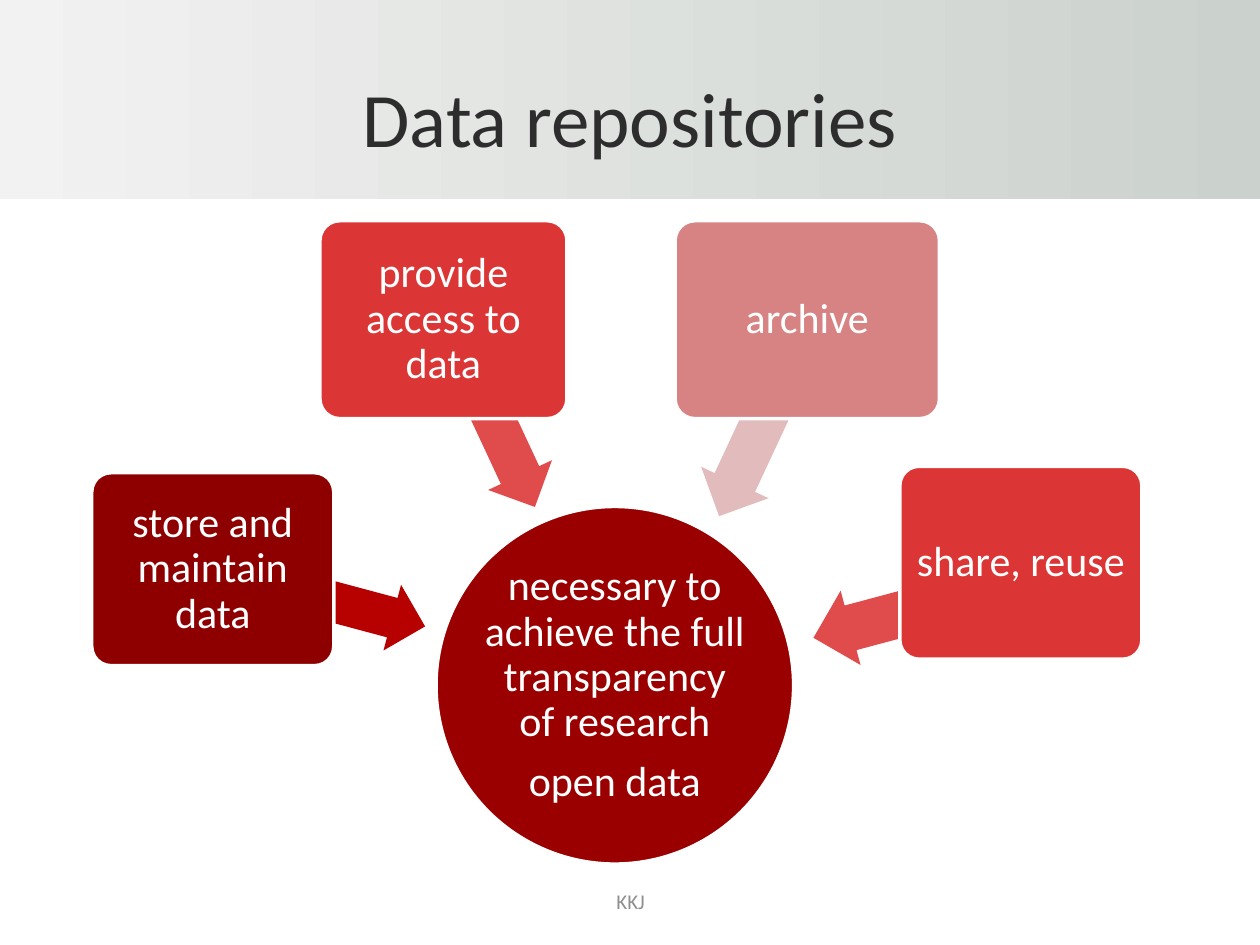
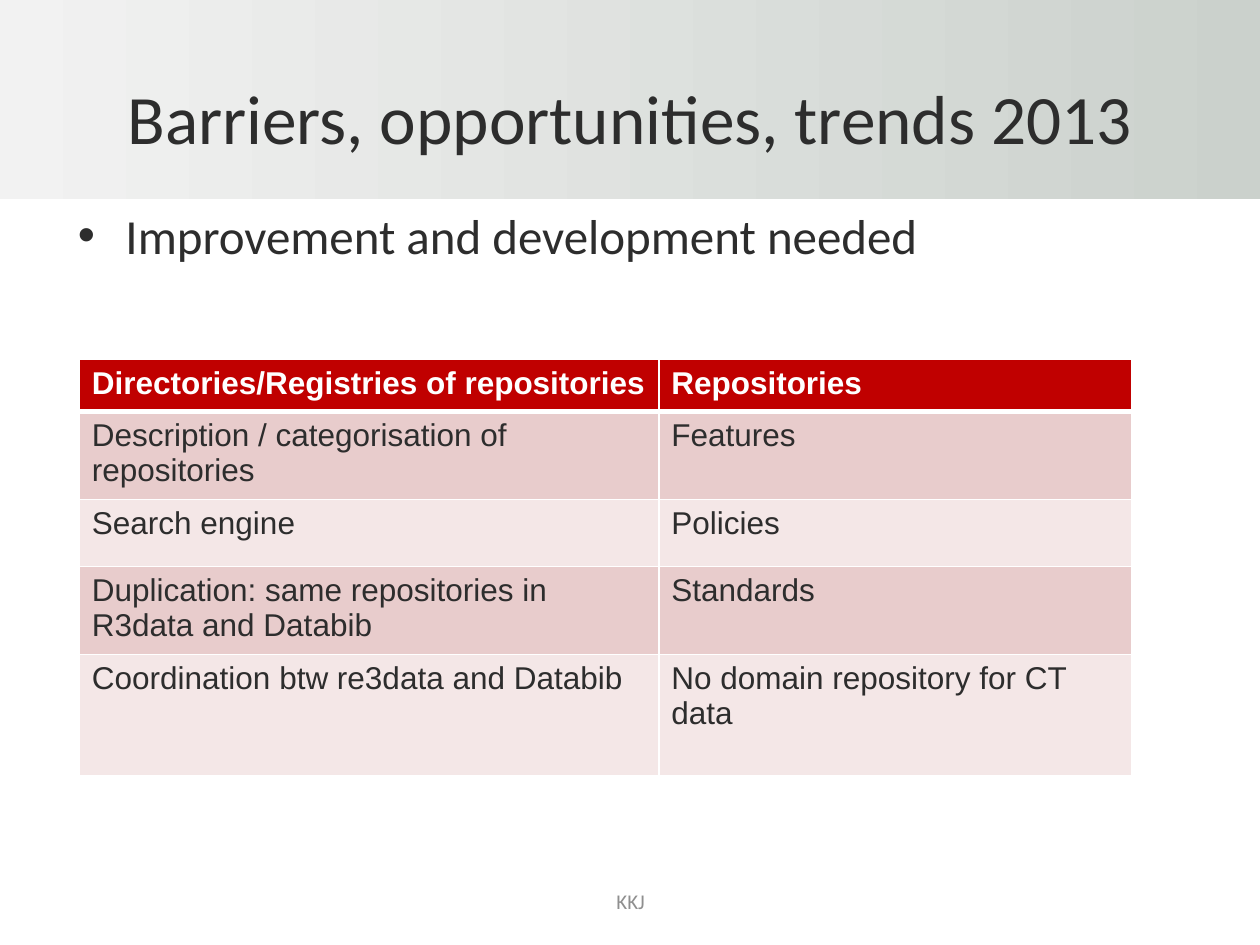
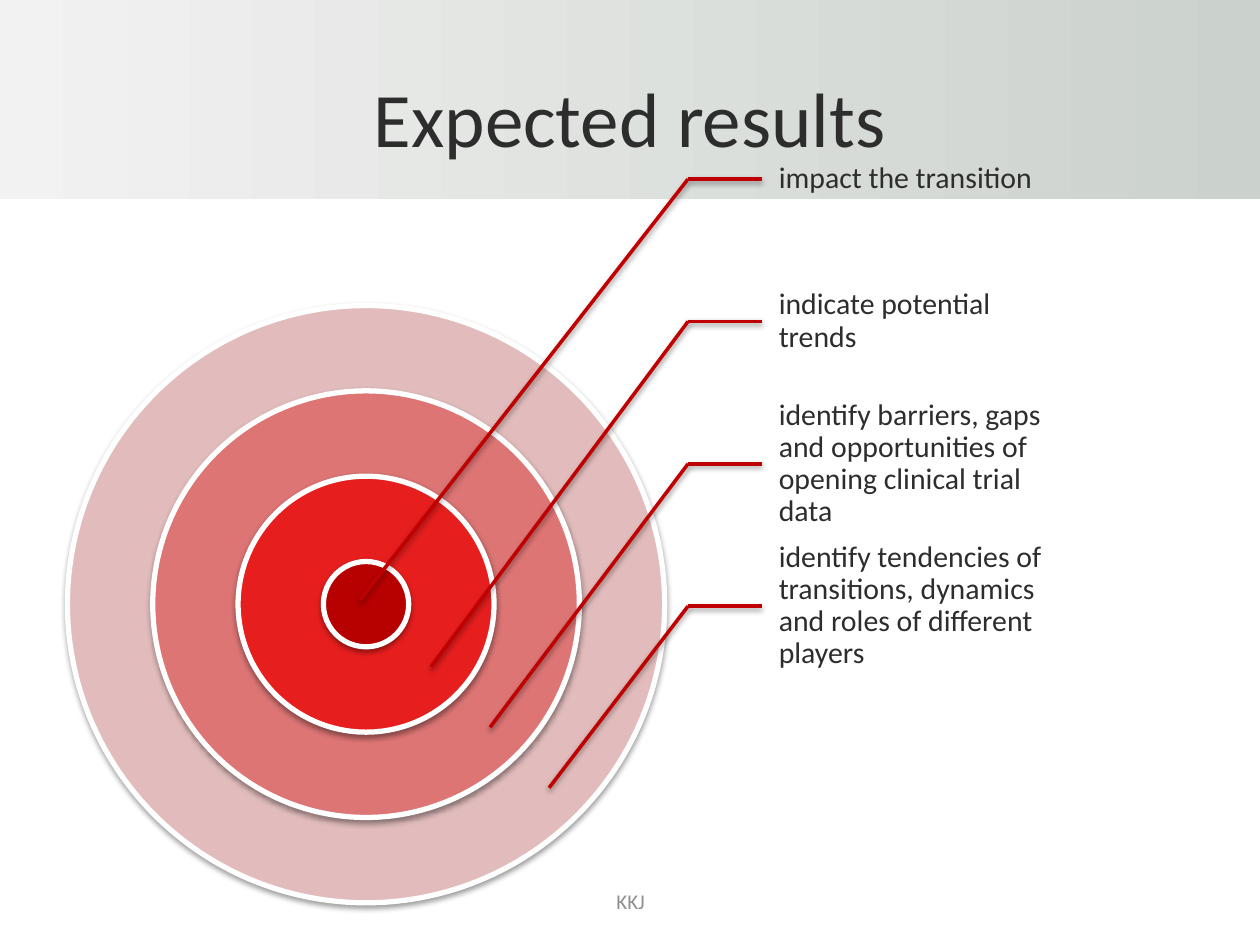
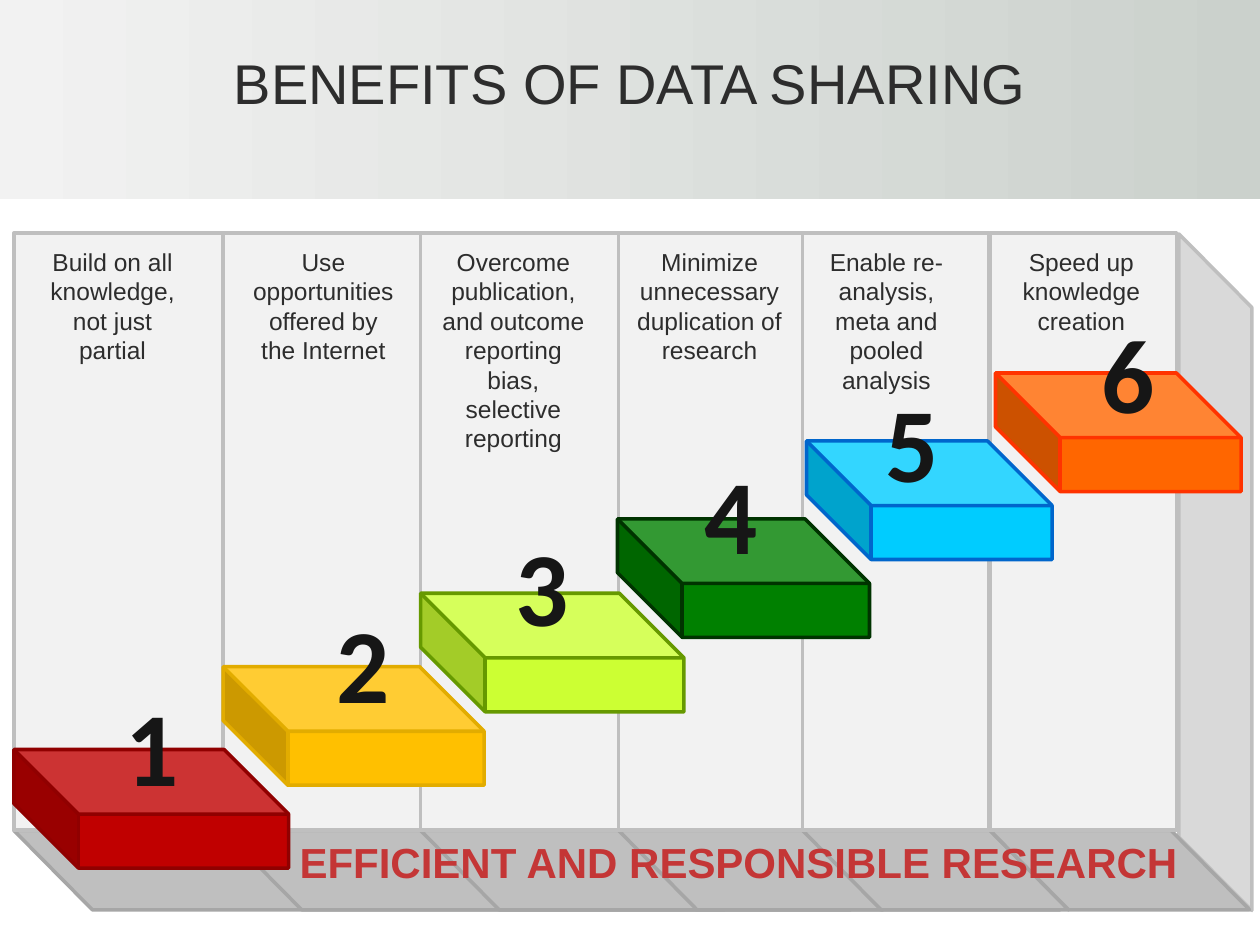
from lxml import etree
from pptx import Presentation
from pptx.dml.color import RGBColor
from pptx.enum.shapes import MSO_CONNECTOR, MSO_SHAPE
from pptx.enum.text import MSO_ANCHOR, PP_ALIGN
from pptx.oxml.ns import qn
from pptx.util import Cm, Pt

LEFT, CENTER = PP_ALIGN.LEFT, PP_ALIGN.CENTER
TOP, MIDDLE = MSO_ANCHOR.TOP, MSO_ANCHOR.MIDDLE
STRAIGHT = MSO_CONNECTOR.STRAIGHT
RECT, ROUNDED, OVAL = MSO_SHAPE.RECTANGLE, MSO_SHAPE.ROUNDED_RECTANGLE, MSO_SHAPE.OVAL
LEFT_ARROW, CUBE = MSO_SHAPE.LEFT_ARROW, MSO_SHAPE.CUBE
PARALLELOGRAM = MSO_SHAPE.PARALLELOGRAM

WHITE = RGBColor(0xFF, 0xFF, 0xFF)
INK = RGBColor(0x2D, 0x2D, 0x2D)
NUMBER_INK = RGBColor(0x16, 0x16, 0x16)
FOOTER_GRAY = RGBColor(0x8F, 0x8F, 0x8F)
BAND_START = RGBColor(0xF2, 0xF2, 0xF2)
BAND_END = RGBColor(0xCB, 0xD1, 0xCC)

RED = RGBColor(0xC0, 0x00, 0x00)
DEEP_RED = RGBColor(0x9A, 0x00, 0x00)
DARK_RED = RGBColor(0x8E, 0x00, 0x00)
CORE_RED = RGBColor(0xB7, 0x00, 0x00)
SCARLET = RGBColor(0xDC, 0x35, 0x35)
SOFT_SCARLET = RGBColor(0xE0, 0x4B, 0x4B)
BRIGHT_RED = RGBColor(0xE6, 0x1E, 0x1E)
ROSE = RGBColor(0xDD, 0x75, 0x75)
DUSTY_ROSE = RGBColor(0xD7, 0x83, 0x83)
PINK = RGBColor(0xE2, 0xBC, 0xBC)
ROW_DARK = RGBColor(0xE8, 0xCC, 0xCC)
ROW_LIGHT = RGBColor(0xF4, 0xE7, 0xE7)
SLOGAN_RED = RGBColor(0xC4, 0x36, 0x36)

PANEL_FILL = RGBColor(0xF2, 0xF2, 0xF2)
PANEL_EDGE = RGBColor(0xBF, 0xBF, 0xBF)
FLOOR_EDGE = RGBColor(0xA6, 0xA6, 0xA6)
WALL_FILL = RGBColor(0xD9, 0xD9, 0xD9)

BODY_FONT, PLAIN_FONT = "Calibri", "Arial"
SLIDE_W, SLIDE_H = 25.4, 19.05


def lengths(*values):
    return [Cm(value) for value in values]


def write(shape, texts, size, color=INK, font=BODY_FONT, bold=False, align=CENTER,
          anchor=MIDDLE, insets=(0.25, 0.13), wrap=True, line_spacing=None, gap=0):
    """Fill a shape with paragraphs; insets are (sides, top and bottom) in cm."""
    frame = shape.text_frame
    frame.word_wrap = wrap
    frame.vertical_anchor = anchor
    frame.margin_left = frame.margin_right = Cm(insets[0])
    frame.margin_top = frame.margin_bottom = Cm(insets[1])
    for index, text in enumerate(texts):
        paragraph = frame.add_paragraph() if index else frame.paragraphs[0]
        paragraph.text = text
        paragraph.alignment = align
        paragraph.line_spacing = line_spacing
        if index:
            paragraph.space_before = Pt(gap)
        style_font(paragraph.font, size, color, font, bold)


def style_font(target, size, color, font, bold):
    target.size = Pt(size)
    target.name = font
    target.bold = bold
    target.color.rgb = color


def add_text(slide, box, text, size, **style):
    label = slide.shapes.add_textbox(*lengths(*box))
    write(label, [text] if isinstance(text, str) else text, size, **style)
    return label


def add_block(slide, kind, box, fill, edge=None, edge_width=2, adjust=(), rotation=0,
              mirrored=False):
    block = slide.shapes.add_shape(kind, *lengths(*box))
    block.shadow.inherit = False
    block.fill.solid()
    block.fill.fore_color.rgb = fill
    if edge is None:
        block.line.fill.background()
    else:
        block.line.color.rgb = edge
        block.line.width = Pt(edge_width)
    for index, value in enumerate(adjust):
        block.adjustments[index] = value
    block.rotation = rotation
    if mirrored:
        block._element.spPr.find(qn("a:xfrm")).set("flipH", "1")
    return block


def add_soft_shadow(effects):
    """Put a short downward shadow into an a:effectLst element."""
    shadow = etree.SubElement(effects, qn("a:outerShdw"), blurRad="40000", dist="20000",
                              dir="5400000", rotWithShape="0")
    black = etree.SubElement(shadow, qn("a:srgbClr"), val="000000")
    etree.SubElement(black, qn("a:alpha"), val="38000")


def add_leader(slide, start, end):
    leader = slide.shapes.add_connector(STRAIGHT, *lengths(*start, *end))
    leader.line.color.rgb = RED
    leader.line.width = Pt(2)
    add_soft_shadow(etree.SubElement(leader._element.spPr, qn("a:effectLst")))


def add_banded_slide(deck):
    slide = deck.slides.add_slide(deck.slide_layouts[6])
    band = add_block(slide, RECT, (0, 0, SLIDE_W, 4.01), BAND_START)
    band.fill.gradient()
    band.fill.gradient_angle = 0
    for stop, color in zip(band.fill.gradient_stops, (BAND_START, BAND_END)):
        stop.color.rgb = color
    return slide


def add_titled_slide(deck, title, size=44):
    slide = add_banded_slide(deck)
    add_text(slide, (1.27, 0.76, 22.86, 3.18), title, size)
    add_text(slide, (8.69, 17.65, 8.05, 1.02), "KKJ", 12, color=FOOTER_GRAY)
    return slide


def add_bullet(slide, box, text, size):
    label = slide.shapes.add_textbox(*lengths(*box))
    properties = label.text_frame.paragraphs[0]._p.get_or_add_pPr()
    properties.set("marL", str(Cm(0.96)))
    properties.set("indent", str(Cm(-0.96)))
    etree.SubElement(properties, qn("a:buFont"), typeface="Arial")
    etree.SubElement(properties, qn("a:buChar"), char="•")
    write(label, [text], size, align=LEFT, anchor=TOP)


def add_cell_borders(cell, **widths):
    """Draw white borders; keys are the sides L, R, T and B, values are points."""
    properties = cell._tc.get_or_add_tcPr()
    for side, width in widths.items():
        border = etree.SubElement(properties, qn(f"a:ln{side}"), w=str(Pt(width)))
        fill = etree.SubElement(border, qn("a:solidFill"))
        etree.SubElement(fill, qn("a:srgbClr"), val=str(WHITE))


def add_grid(slide, left, top, column_widths, row_heights, rows):
    grid = slide.shapes.add_table(len(rows), len(column_widths), *lengths(
        left, top, sum(column_widths), sum(row_heights))).table
    for column, width in zip(grid.columns, column_widths):
        column.width = Cm(width)
    for index, (texts, height) in enumerate(zip(rows, row_heights)):
        grid.rows[index].height = Cm(height)
        header = index == 0
        fill = RED if header else (ROW_LIGHT, ROW_DARK)[index % 2]
        for column, text in enumerate(texts):
            cell = grid.cell(index, column)
            add_cell_borders(cell, L=1, R=1, T=3 if index == 1 else 1, B=3 if header else 1)
            cell.fill.solid()
            cell.fill.fore_color.rgb = fill
            cell.text = text
            style_font(cell.text_frame.paragraphs[0].font, 18,
                       WHITE if header else INK, PLAIN_FONT, header)


def build_repositories(deck):
    slide = add_titled_slide(deck, "Data repositories")
    goal_box = (8.79, 10.21, 7.21, 7.21)
    add_block(slide, OVAL, goal_box, DEEP_RED, WHITE)
    add_text(slide, goal_box,
             ["necessary to achieve the full transparency of research", "open data"],
             24, color=WHITE, insets=(0.94, 0.94), line_spacing=0.9, gap=8.4)
    roles = [
        ("store and maintain data", (1.85, 9.53, 4.88, 3.89), DARK_RED,
         (5.05, 11.48, 3.58, 1.37), 195, CORE_RED),
        ("provide access to data", (6.45, 4.45, 4.98, 3.99), SCARLET,
         (8.13, 7.82, 3.73, 1.42), 245, SOFT_SCARLET),
        ("archive", (13.61, 4.45, 5.33, 3.99), DUSTY_ROSE,
         (13.36, 7.87, 3.94, 1.5), 295, PINK),
        ("share, reuse", (18.14, 9.4, 4.88, 3.89), SCARLET,
         (16.33, 11.56, 4.04, 1.55), 345, SOFT_SCARLET),
    ]
    for role, role_box, role_fill, arrow_box, angle, arrow_fill in roles:
        add_block(slide, LEFT_ARROW, arrow_box, arrow_fill, adjust=(0.6, 0.5), rotation=angle)
        card = add_block(slide, ROUNDED, role_box, role_fill, WHITE, adjust=(0.1,))
        write(card, [role], 24, color=WHITE, insets=(0.19, 0.19), line_spacing=0.9)


def build_barriers(deck):
    slide = add_titled_slide(deck, "Barriers, opportunities, trends 2013", 39.6)
    add_bullet(slide, (1.32, 4.01, 22.86, 12.57), "Improvement and development needed", 28)
    add_grid(slide, 1.6, 7.24, (11.68, 9.53), (1.05, 1.67, 1.35, 1.67, 2.45), [
        ("Directories/Registries of repositories", "Repositories"),
        ("Description / categorisation of repositories", "Features"),
        ("Search engine", "Policies"),
        ("Duplication: same repositories in R3data and Databib", "Standards"),
        ("Coordination btw re3data and Databib", "No domain repository for CT data"),
    ])


def build_results(deck):
    slide = add_titled_slide(deck, "Expected results")
    center_x, center_y, core = 7.38, 12.18, 1.72
    for multiple, fill in ((7, PINK), (5, ROSE), (3, BRIGHT_RED), (1, CORE_RED)):
        size = core * multiple
        ring = add_block(slide, OVAL, (center_x - size / 2, center_y - size / 2, size, size),
                         fill, WHITE, 3)
        add_soft_shadow(ring._element.spPr.find(qn("a:effectLst")))

    elbow_x, label_x, first_y, step = 13.87, 15.37, 3.61, 2.87
    results = [
        ("impact the transition", (7.26, 12.09)),
        ("indicate potential trends", (8.69, 13.44)),
        ("identify barriers, gaps and opportunities of opening clinical trial data",
         (9.88, 14.66)),
        ("identify tendencies of transitions, dynamics and roles of different players",
         (11.07, 15.88)),
    ]
    for index, (result, target) in enumerate(results):
        y = first_y + index * step
        add_text(slide, (label_x, y - step / 2, 5.99, step), result, 17, align=LEFT,
                 insets=(0.33, 0.05), line_spacing=0.9)
        add_leader(slide, (elbow_x, y), (label_x, y))
        add_leader(slide, (elbow_x, y), target)


def build_benefits(deck):
    slide = add_banded_slide(deck)
    add_text(slide, (0, 0.84, SLIDE_W, 1.63), "BENEFITS OF DATA SHARING", 32,
             font=PLAIN_FONT, anchor=TOP)
    panel_top, panel_height, floor_top = 4.7, 12.03, 16.74
    add_block(slide, PARALLELOGRAM, (17.68, 10.8, 13.64, 1.47), WALL_FILL, PANEL_EDGE,
              adjust=(1.007,), rotation=270)
    panels = [  # left, width, floor width
        (0.28, 4.24, 16.87), (4.5, 3.99, 16.87), (8.48, 3.99, 6.12),
        (12.47, 3.76, 5.33), (16.18, 3.76, 5.36), (19.96, 3.76, 5.23),
    ]
    for left, width, floor_width in panels:
        add_block(slide, PARALLELOGRAM, (left, floor_top, floor_width, 1.6), PANEL_EDGE,
                  FLOOR_EDGE, adjust=(0.989,), rotation=180, mirrored=True)
    for left, width, _ in panels:
        add_block(slide, RECT, (left, panel_top, width, panel_height), PANEL_FILL, PANEL_EDGE)

    # caption, its (left, width, lines), step (left, top, width), number (left, top), fill, edge
    steps = [
        ("Build on all knowledge, not just partial", (0.58, 3.38, 4),
         (0.28, 15.11, 5.54), (2.54, 13.74), RED, RGBColor(0x90, 0x00, 0x00)),
        ("Use opportunities offered by the Internet", (4.83, 3.38, 4),
         (4.5, 13.44, 5.26), (6.78, 12.07),
         RGBColor(0xFF, 0xC0, 0x00), RGBColor(0xE2, 0xAC, 0x00)),
        ("Overcome publication, and outcome reporting bias, selective reporting",
         (8.66, 3.38, 7), (8.48, 11.96, 5.31), (10.39, 10.52),
         RGBColor(0xCC, 0xFF, 0x33), RGBColor(0x66, 0x99, 0x00)),
        ("Minimize unnecessary duplication of research", (12.45, 3.71, 4),
         (12.45, 10.46, 5.08), (14.2, 9.07),
         RGBColor(0x00, 0x80, 0x00), RGBColor(0x00, 0x33, 0x00)),
        ("Enable re-analysis, meta and pooled analysis", (16.18, 3.38, 5),
         (16.26, 8.89, 4.95), (17.86, 7.62),
         RGBColor(0x00, 0xCC, 0xFF), RGBColor(0x00, 0x66, 0xCC)),
        ("Speed up knowledge creation", (20.02, 3.56, 3),
         (20.07, 7.52, 4.95), (22.2, 6.22),
         RGBColor(0xFF, 0x66, 0x00), RGBColor(0xFF, 0x33, 0x00)),
    ]
    for number, (caption, caption_place, step_place, number_place, fill, edge) in enumerate(
            steps, start=1):
        caption_left, caption_width, lines = caption_place
        add_block(slide, CUBE, (*step_place, 2.39), fill, edge, adjust=(0.545,), mirrored=True)
        add_text(slide, (caption_left, 4.85, caption_width, 0.25 + 0.6 * lines), caption, 14,
                 font=PLAIN_FONT, anchor=TOP)
        add_text(slide, (*number_place, 0.79, 1.93), str(number), 60, color=NUMBER_INK,
                 bold=True, anchor=TOP, insets=(0, 0), wrap=False)
    add_text(slide, (5.79, floor_top, 18.31, 1.27), "EFFICIENT AND RESPONSIBLE RESEARCH", 24,
             color=SLOGAN_RED, font=PLAIN_FONT, bold=True, align=LEFT, anchor=TOP)


def main():
    deck = Presentation()
    deck.slide_width, deck.slide_height = lengths(SLIDE_W, SLIDE_H)
    build_repositories(deck)
    build_barriers(deck)
    build_results(deck)
    build_benefits(deck)
    deck.save("out.pptx")


if __name__ == "__main__":
    main()
